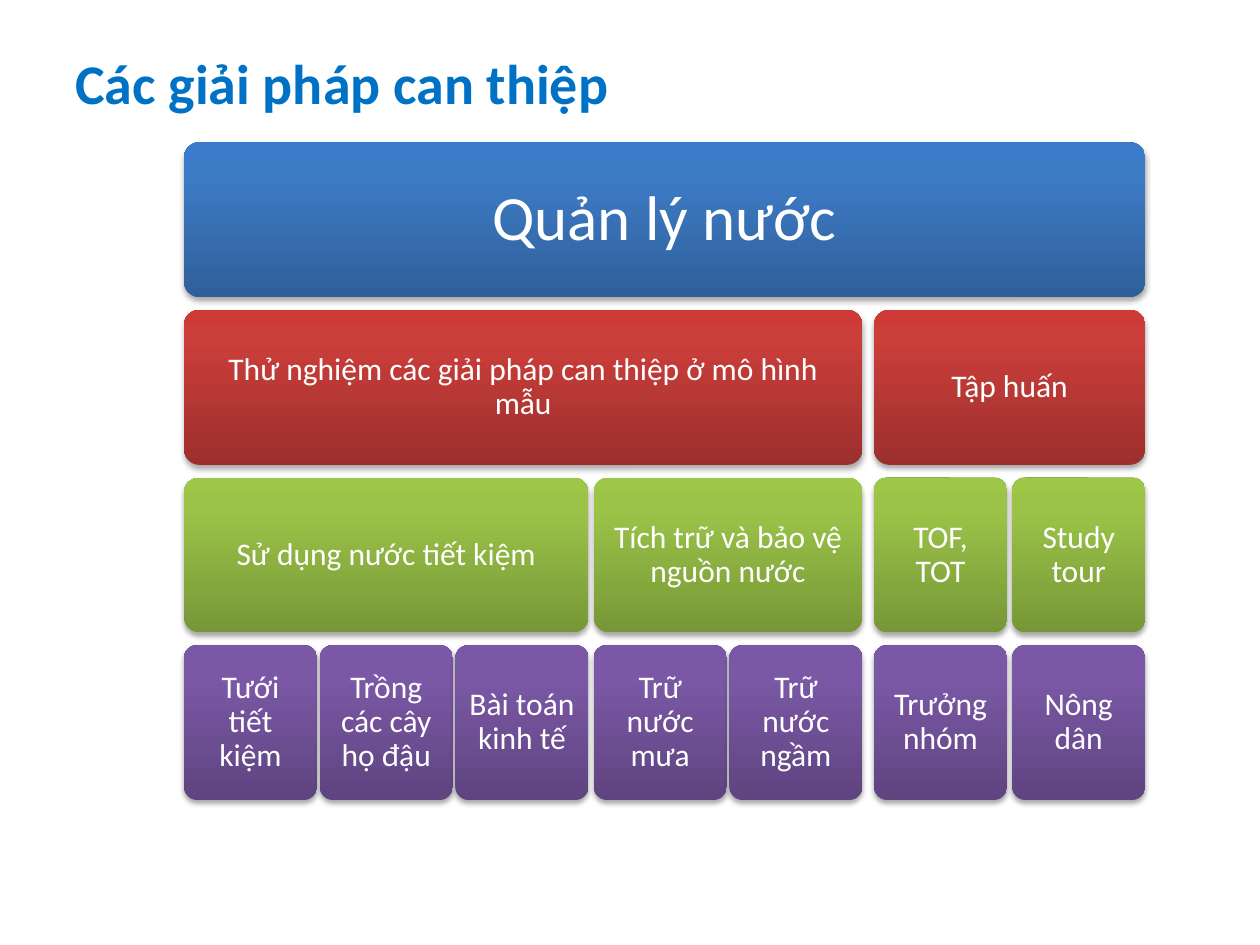
from copy import deepcopy
from pptx import Presentation
from pptx.dml.color import RGBColor
from pptx.enum.shapes import MSO_SHAPE as Shape
from pptx.enum.text import MSO_ANCHOR as Anchor, PP_ALIGN as Align
from pptx.oxml import parse_xml
from pptx.oxml.ns import nsdecls, qn
from pptx.util import Inches, Pt

# Content: each node is (text, children)
TITLE = "Các giải pháp can thiệp"
TREE = ("Quản lý nước", [
    ("Thử nghiệm các giải pháp can thiệp ở mô hình mẫu", [
        ("Sử dụng nước tiết kiệm", [
            ("Tưới tiết kiệm", []),
            ("Trồng các cây họ đậu", []),
            ("Bài toán kinh tế", [])]),
        ("Tích trữ và bảo vệ nguồn nước", [
            ("Trữ nước mưa", []),
            ("Trữ nước ngầm", [])])]),
    ("Tập huấn", [
        ("TOF, TOT", [("Trưởng nhóm", [])]),
        ("Study tour", [("Nông dân", [])])])])

# Style
FONT = "Calibri"
BLUE = RGBColor(0x00, 0x72, 0xC6)
WHITE = RGBColor(0xFF, 0xFF, 0xFF)
STOPS = (0, 0.8, 1)
# One entry per level: gradient from bottom to top, text size, inset
LEVELS = [
    ([RGBColor(0x2F, 0x5F, 0x99), RGBColor(0x3D, 0x7C, 0xC7), RGBColor(0x3A, 0x7C, 0xCB)], 36, 0.15),
    ([RGBColor(0x9C, 0x2F, 0x2D), RGBColor(0xCB, 0x3E, 0x3A), RGBColor(0xCE, 0x3B, 0x37)], 18, 0.07),
    ([RGBColor(0x77, 0x97, 0x37), RGBColor(0x9B, 0xC3, 0x48), RGBColor(0x9D, 0xC7, 0x46)], 18, 0.07),
    ([RGBColor(0x5F, 0x44, 0x80), RGBColor(0x7B, 0x58, 0xA6), RGBColor(0x7C, 0x57, 0xA8)], 18, 0.07),
]

# Grid, in inches
LEFT, TOP, WIDTH = 1.46, 1.13, 7.63
HIGH, PITCH = 1.23, 1.33
GAPS = (0.09, 0.04, 0.02)  # between the children of a node, by its level


def measure(node, level=0):
    """Count the leaves under a node and add up the gaps between them."""
    kids = node[1]
    if not kids:
        return 1, 0
    sizes = [measure(kid, level + 1) for kid in kids]
    gaps = sum(gap for _, gap in sizes) + GAPS[level] * (len(kids) - 1)
    return sum(count for count, _ in sizes), gaps


def write(frame, text, size, color, bold=False, align=Align.LEFT):
    frame.word_wrap = True
    frame.vertical_anchor = Anchor.MIDDLE
    para = frame.paragraphs[0]
    para.alignment = align
    run = para.add_run()
    run.text = text
    font = run.font
    font.name, font.size, font.bold = FONT, Pt(size), bold
    font.color.rgb = color
    return para


def paint(box, colors):
    box.fill.gradient()
    box.fill.gradient_angle = 90
    first = box._element.spPr.find(".//" + qn("a:gs"))
    first.addnext(deepcopy(first))
    for stop, place, color in zip(box.fill.gradient_stops, STOPS, colors):
        stop.position = place
        stop.color.rgb = color
    box.line.fill.background()
    # Soft shadow straight below
    box.shadow.inherit = False
    box._element.spPr.find(qn("a:effectLst")).append(parse_xml(
        f'<a:outerShdw {nsdecls("a")} blurRad="{Pt(3.1)}" dist="{Pt(1.8)}" '
        'dir="5400000" rotWithShape="0"><a:srgbClr val="000000">'
        '<a:alpha val="35000"/></a:srgbClr></a:outerShdw>'))


def draw(shapes, node, leaf, left=LEFT, level=0):
    """Draw a node as wide as its leaves, then its children below."""
    text, kids = node
    colors, size, inset = LEVELS[level]
    count, gaps = measure(node, level)
    width = count * leaf + gaps
    box = shapes.add_shape(Shape.ROUNDED_RECTANGLE, Inches(left),
                           Inches(TOP + level * PITCH), Inches(width), Inches(HIGH))
    box.adjustments[0] = 0.1
    paint(box, colors)
    frame = box.text_frame
    frame.margin_left = frame.margin_right = Inches(inset)
    frame.margin_top = frame.margin_bottom = Inches(inset)
    write(frame, text, size, WHITE, align=Align.CENTER).line_spacing = 0.9
    x = left
    for kid in kids:
        x = draw(shapes, kid, leaf, x, level + 1) + GAPS[level]
    return left + width


def main():
    deck = Presentation()
    deck.slide_width, deck.slide_height = Inches(10), Inches(7.5)
    shapes = deck.slides.add_slide(deck.slide_layouts[6]).shapes

    # Title
    head = shapes.add_textbox(Inches(0.5), Inches(0.17), Inches(9), Inches(0.96))
    write(head.text_frame, TITLE, 32, BLUE, bold=True)

    # Hierarchy
    count, gaps = measure(TREE)
    draw(shapes, TREE, (WIDTH - gaps) / count)
    deck.save("out.pptx")


if __name__ == "__main__":
    main()
